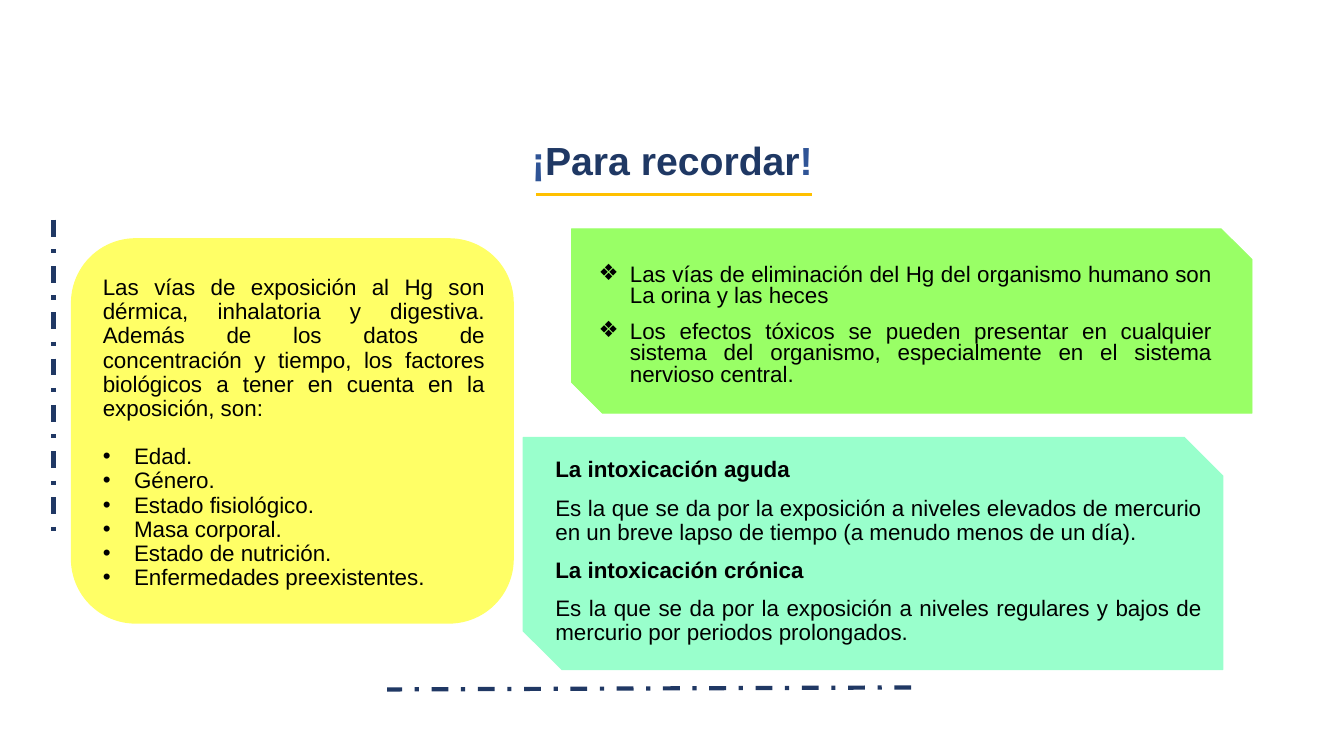
from dataclasses import dataclass
from lxml.etree import SubElement as Sub
from pptx import Presentation
from pptx.dml.color import RGBColor as Color
from pptx.enum.dml import MSO_LINE_DASH_STYLE as Dash
from pptx.enum.shapes import MSO_CONNECTOR as Link, MSO_SHAPE as Form
from pptx.enum.text import MSO_ANCHOR as Anchor, MSO_AUTO_SIZE as Fit, PP_ALIGN as Align
from pptx.oxml.ns import qn
from pptx.util import Inches, Pt

WIDE, HIGH = Inches(13.33), Inches(7.5)
FONT = "Arial"
NAVY = "203864"
HANG = Inches(0.31)


@dataclass
class Box:
    left: float
    top: float
    width: float
    height: float

    def place(self) -> tuple[int, int, int, int]:
        return col(self.left), row(self.top), col(self.width), row(self.height)


@dataclass
class Panel:
    form: Form
    box: Box
    fill: str
    edge: float = 1
    turn: float = 0


@dataclass
class Rule:
    start: tuple[float, float]
    end: tuple[float, float]
    tint: str = NAVY
    width: float = 3
    dash: Dash = Dash.DASH_DOT


@dataclass
class Para:
    text: str
    mark: str = ""
    bold: bool = False
    gap: float = 0


def col(share: float) -> int:
    return round(WIDE * share / 100)


def row(share: float) -> int:
    return round(HIGH * share / 100)


def paint(tint: str) -> Color:
    return Color.from_string(tint)


def style(run, size: float, tint: str, bold: bool) -> None:
    font = run.font
    font.name, font.size, font.bold = FONT, Pt(size), bold
    font.color.rgb = paint(tint)


def move(shape, box: Box) -> None:
    shape.left, shape.top, shape.width, shape.height = box.place()


def draw_panel(shapes, item: Panel) -> None:
    shape = shapes.add_shape(item.form, *item.box.place())
    shape.shadow.inherit = False
    shape.rotation = item.turn
    shape.fill.solid()
    shape.fill.fore_color.rgb = paint(item.fill)
    shape.line.color.rgb = paint(item.fill)
    shape.line.width = Pt(item.edge)


def draw_rule(shapes, item: Rule) -> None:
    (left, top), (right, low) = item.start, item.end
    line = shapes.add_connector(Link.STRAIGHT, col(left), row(top), col(right), row(low))
    line.line.color.rgb = paint(item.tint)
    line.line.width = Pt(item.width)
    line.line.dash_style = item.dash
    Sub(line.element.spPr, qn("a:effectLst"))


def set_mark(para, mark: str) -> None:
    props = para._p.get_or_add_pPr()
    props.set("marL", str(HANG if mark else 0))
    props.set("indent", str(-HANG if mark else 0))
    if mark:
        Sub(props, qn("a:buFont"), typeface=FONT)
        Sub(props, qn("a:buChar"), char=mark)
    else:
        Sub(props, qn("a:buNone"))


def write(shape, items: list[Para], pitch: float) -> None:
    frame = shape.text_frame
    frame.word_wrap = True
    frame.auto_size = Fit.NONE
    frame.vertical_anchor = Anchor.TOP
    frame.text = "\n".join(item.text for item in items)
    for para, item in zip(frame.paragraphs, items):
        set_mark(para, item.mark)
        para.alignment = Align.JUSTIFY
        para.line_spacing = pitch
        para.space_before = Pt(item.gap)
        for run in para.runs:
            style(run, 16, "000000", item.bold)


def write_title(shape) -> None:
    move(shape, Box(6.9, 11.47, 86.25, 20.13))
    frame = shape.text_frame
    frame.auto_size = Fit.NONE
    frame.vertical_anchor = Anchor.MIDDLE
    para = frame.paragraphs[0]
    para.alignment = Align.CENTER
    para.line_spacing = 0.9
    for text, tint in (("¡", "2F5496"), ("Para recordar", "1F3864"), ("!", "2F5496")):
        run = para.add_run()
        run.text = text
        style(run, 28, tint, True)


PANELS = [
    Panel(Form.SNIP_2_DIAG_RECTANGLE, Box(38.93, 57.87, 52.05, 30.67), "99FFCC", turn=180),
    Panel(Form.SNIP_2_DIAG_RECTANGLE, Box(42.53, 30.27, 50.63, 24.4), "99FF66", 0.5),
    Panel(Form.ROUNDED_RECTANGLE, Box(5.33, 31.6, 32.85, 50.8), "FFFF66"),
]
RULES = [
    Rule((39.9, 25.73), (60.45, 25.73), "FFC000", 2.25, Dash.SOLID),
    Rule((67.8, 90.93), (28.8, 91.2)),
    Rule((3.98, 29.07), (3.98, 70.93)),
]
FACTORS = ["Edad.", "Género.", "Estado fisiológico.", "Masa corporal.",
           "Estado de nutrición.", "Enfermedades preexistentes."]
ROUTES = [
    Para("Las vías de exposición al Hg son dérmica, inhalatoria y digestiva. "
         "Además de los datos de concentración y tiempo, los factores biológicos "
         "a tener en cuenta en la exposición, son:"),
    *(Para(name, "•", gap=0 if i else 17.3) for i, name in enumerate(FACTORS)),
]
EFFECTS = [
    Para("Las vías de eliminación del Hg del organismo humano son La orina y las heces", "❖"),
    Para("Los efectos tóxicos se pueden presentar en cualquier sistema del organismo, "
         "especialmente en el sistema nervioso central.", "❖", gap=10),
]
KINDS = [
    Para("La intoxicación aguda", bold=True),
    Para("Es la que se da por la exposición a niveles elevados de mercurio "
         "en un breve lapso de tiempo (a menudo menos de un día).", gap=10),
    Para("La intoxicación crónica", bold=True, gap=10),
    Para("Es la que se da por la exposición a niveles regulares y bajos de mercurio "
         "por periodos prolongados.", gap=10),
]


def main() -> None:
    deck = Presentation()
    deck.slide_width, deck.slide_height = WIDE, HIGH
    slide = deck.slides.add_slide(deck.slide_layouts[1])
    shapes = slide.shapes
    for item in PANELS:
        draw_panel(shapes, item)
    write_title(shapes.title)
    body = slide.placeholders[1]
    shapes.element.append(body.element)
    move(body, Box(6.9, 35.87, 29.93, 50.8))
    write(body, ROUTES, 0.9)
    for item in RULES:
        draw_rule(shapes, item)
    write(shapes.add_textbox(*Box(43.8, 34.4, 47.1, 18).place()), EFFECTS, 0.8)
    write(shapes.add_textbox(*Box(40.58, 60, 49.58, 26.4).place()), KINDS, 0.9)
    deck.save("out.pptx")


if __name__ == "__main__":
    main()
